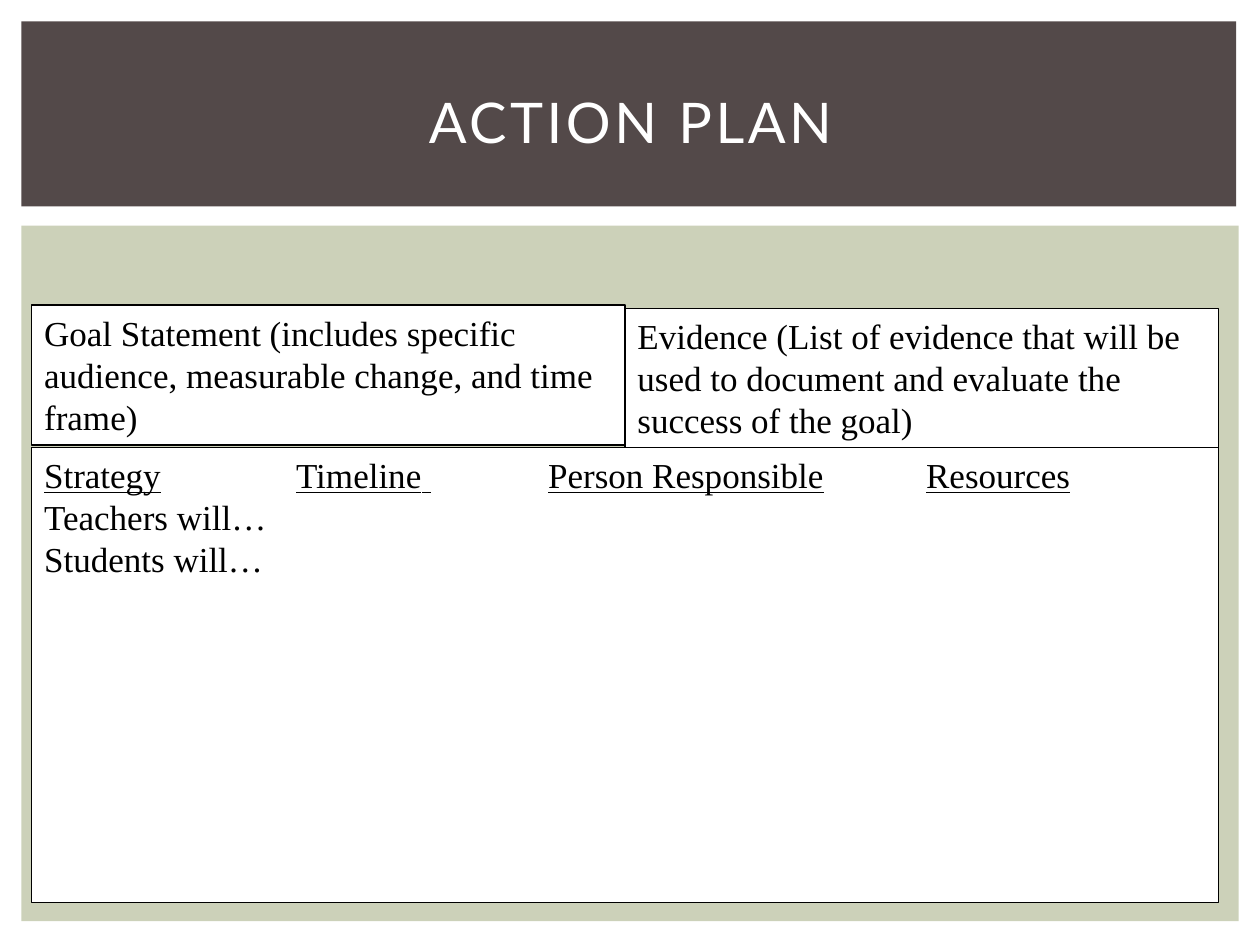
"""Build the action plan slide with its goal, evidence and strategy boxes."""
from lxml import etree
from pptx import Presentation
from pptx.dml.color import RGBColor
from pptx.enum.shapes import MSO_SHAPE
from pptx.enum.text import MSO_ANCHOR, MSO_AUTO_SIZE, PP_ALIGN
from pptx.oxml.ns import qn
from pptx.util import Cm, Pt

RECTANGLE = MSO_SHAPE.RECTANGLE
TOP, MIDDLE = MSO_ANCHOR.TOP, MSO_ANCHOR.MIDDLE
LEFT, CENTER = PP_ALIGN.LEFT, PP_ALIGN.CENTER
GROW, FIXED = MSO_AUTO_SIZE.SHAPE_TO_FIT_TEXT, MSO_AUTO_SIZE.NONE
WHITE = RGBColor(0xFF, 0xFF, 0xFF)
BLACK = RGBColor(0x00, 0x00, 0x00)
SAGE = RGBColor(0xCC, 0xD1, 0xB9)
BROWN = RGBColor(0x53, 0x49, 0x49)
TITLE_FONT = {"name": "Lato", "size": Pt(32)}
BODY_FONT = {"name": "Times New Roman", "size": Pt(20)}
TAB_STEP = Cm(2.54)


def add_box(left, top, width, height, fill_color):
    shape = slide.shapes.add_shape(RECTANGLE, Cm(left), Cm(top), Cm(width), Cm(height))
    shape.shadow.inherit = False
    shape.fill.solid()
    shape.fill.fore_color.rgb = fill_color
    shape.line.fill.background()
    return shape


def write_lines(shape, lines, font_format, color, alignment, frame_format):
    for name, value in frame_format.items():
        setattr(shape.text_frame, name, value)
    shape.text_frame.text = "\n".join(lines)
    for paragraph in shape.text_frame.paragraphs:
        paragraph.alignment = alignment
        font = paragraph.runs[0].font
        font.color.rgb = color
        for name, value in font_format.items():
            setattr(font, name, value)
    return shape.text_frame.paragraphs[0]


presentation = Presentation()
presentation.slide_width, presentation.slide_height = Cm(25.4), Cm(19.05)
slide = presentation.slides.add_slide(presentation.slide_layouts[6])

add_box(0.43, 4.55, 24.54, 14.02, SAGE)
add_box(0.43, 0.43, 24.49, 3.73, BROWN)

title = slide.shapes.add_textbox(Cm(1.07), Cm(0.99), Cm(23.29), Cm(2.92))
title_frame = {"word_wrap": True, "vertical_anchor": MIDDLE}
title_paragraph = write_lines(title, ["ACTION PLAN"], TITLE_FONT, WHITE, CENTER, title_frame)
title_paragraph.runs[0]._r.get_or_add_rPr().set("spc", "200")

boxes = [
    (0.64, 6.15, 11.96, 2.82, GROW,
     ["Goal Statement (includes specific audience, measurable change, and time frame)"]),
    (12.6, 6.22, 11.96, 2.82, GROW,
     ["Evidence (List of evidence that will be used to document and evaluate "
      "the success of the goal)"]),
    (0.64, 9.02, 23.92, 9.17, FIXED,
     ["Strategy\t\tTimeline\t \tPerson Responsible\tResources",
      "Teachers will…", "Students will…"]),
]
for left, top, width, height, auto_size, lines in boxes:
    box = add_box(left, top, width, height, WHITE)
    box.line.color.rgb = BLACK
    box.line.width = Pt(0.75)
    box_frame = {"word_wrap": True, "vertical_anchor": TOP, "auto_size": auto_size}
    heading = write_lines(box, lines, BODY_FONT, BLACK, LEFT, box_frame)

heading.runs[0].font.underline = True
tab_list = etree.SubElement(heading._p.get_or_add_pPr(), qn("a:tabLst"))
for number in range(1, 9):
    etree.SubElement(tab_list, qn("a:tab"), pos=str(number * TAB_STEP), algn="l")

presentation.save("out.pptx")
